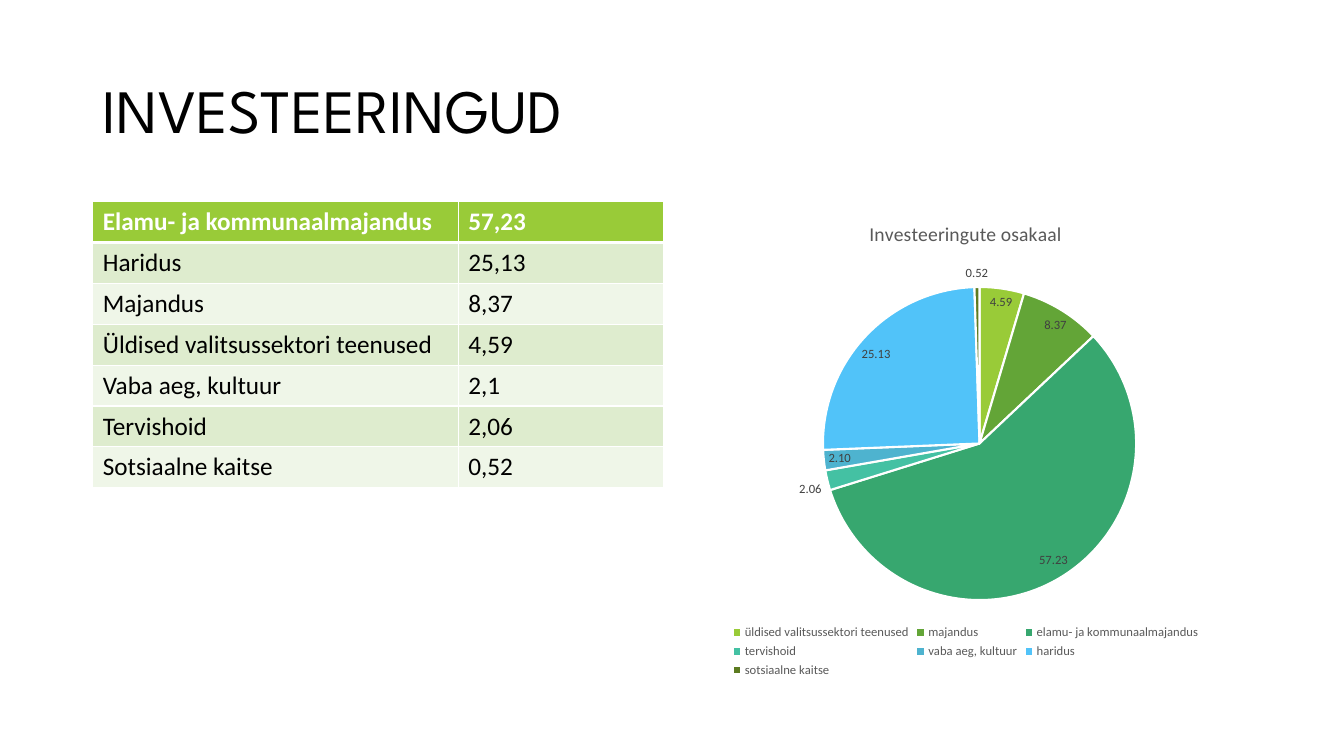
from lxml.etree import SubElement
from pptx import Presentation
from pptx.chart.data import CategoryChartData
from pptx.dml.color import RGBColor
from pptx.enum.chart import XL_CHART_TYPE, XL_LABEL_POSITION, XL_LEGEND_POSITION
from pptx.enum.text import MSO_ANCHOR
from pptx.oxml.ns import qn
from pptx.util import Inches, Pt

BLACK = RGBColor(0x00, 0x00, 0x00)
WHITE = RGBColor(0xFF, 0xFF, 0xFF)
GREY = RGBColor(0x59, 0x59, 0x59)
DARK_GREY = RGBColor(0x40, 0x40, 0x40)
LIME = RGBColor(0x99, 0xCB, 0x38)
BAND_DARK = RGBColor(0xDE, 0xEC, 0xCE)
BAND_LIGHT = RGBColor(0xEF, 0xF6, 0xE8)
SLICE_COLORS = [
    LIME,
    RGBColor(0x63, 0xA5, 0x37),
    RGBColor(0x37, 0xA7, 0x6F),
    RGBColor(0x44, 0xC1, 0xA3),
    RGBColor(0x4E, 0xB3, 0xCF),
    RGBColor(0x51, 0xC3, 0xF9),
    RGBColor(0x5C, 0x7B, 0x20),
]

TABLE_ROWS = [
    ("Elamu- ja kommunaalmajandus", "57,23"),
    ("Haridus", "25,13"),
    ("Majandus", "8,37"),
    ("Üldised valitsussektori teenused", "4,59"),
    ("Vaba aeg, kultuur", "2,1"),
    ("Tervishoid", "2,06"),
    ("Sotsiaalne kaitse", "0,52"),
]
SHARES = {
    "üldised valitsussektori teenused": 4.59,
    "majandus": 8.37,
    "elamu- ja kommunaalmajandus": 57.23,
    "tervishoid": 2.06,
    "vaba aeg, kultuur": 2.1,
    "haridus": 25.13,
    "sotsiaalne kaitse": 0.52,
}


class Deck:
    """Places elements on a grid of 12 columns and rows of 0.4 inch."""

    MARGIN, GUTTER, COLUMNS, ROW = 0.92, 0.16, 12, 0.4
    WIDTH, HEIGHT = 13.33, 7.5
    HEAD_FONT, BODY_FONT = "League Spartan", "Calibri"

    def __init__(self):
        self.prs = Presentation()
        self.prs.slide_width = Inches(self.WIDTH)
        self.prs.slide_height = Inches(self.HEIGHT)
        self.s = self.prs.slides.add_slide(self.prs.slide_layouts[6])

    def box(self, col, row, cols, rows):
        """Return left, top, width and height of a block of grid cells."""
        step = (self.WIDTH - 2 * self.MARGIN + self.GUTTER) / self.COLUMNS
        return (Inches(self.MARGIN + col * step), Inches(row * self.ROW),
                Inches(cols * step - self.GUTTER), Inches(rows * self.ROW))

    def style(self, font, size, color, bold=False, name=BODY_FONT):
        font.name, font.size, font.bold = name, Pt(size), bold
        font.color.rgb = color

    def title(self, text, *cells):
        tf = self.s.shapes.add_textbox(*self.box(*cells)).text_frame
        tf.word_wrap = True
        tf.vertical_anchor = MSO_ANCHOR.MIDDLE
        tf.text = text
        p = tf.paragraphs[0]
        p.line_spacing = 0.9
        self.style(p.runs[0].font, 44, BLACK, name=self.HEAD_FONT)

    def borders(self, cell, bottom, top):
        tc_pr = cell._tc.get_or_add_tcPr()
        for side, width in (("L", 1), ("R", 1), ("T", top), ("B", bottom)):
            ln = SubElement(tc_pr, qn(f"a:ln{side}"), w=str(Pt(width)))
            fill = SubElement(ln, qn("a:solidFill"))
            SubElement(fill, qn("a:srgbClr"), val=str(WHITE))

    def table(self, rows, first_share, *cells):
        left, top, width, height = self.box(*cells)
        table = self.s.shapes.add_table(
            len(rows), len(rows[0]), left, top, width, height).table
        table.columns[0].width = int(width * first_share)
        table.columns[1].width = width - table.columns[0].width
        for i, row in enumerate(rows):
            header = i == 0
            fill = LIME if header else BAND_DARK if i % 2 else BAND_LIGHT
            for j, text in enumerate(row):
                cell = table.cell(i, j)
                cell.text = text
                self.borders(cell, bottom=3 if header else 1,
                             top=3 if i == 1 else 1)
                cell.fill.solid()
                cell.fill.fore_color.rgb = fill
                self.style(cell.text_frame.paragraphs[0].runs[0].font, 18,
                           WHITE if header else BLACK, header)

    def pie(self, title, shares, colors, *cells):
        data = CategoryChartData(number_format="#,##0.00")
        data.categories = list(shares)
        data.add_series(title, list(shares.values()))
        chart = self.s.shapes.add_chart(
            XL_CHART_TYPE.PIE, *self.box(*cells), data).chart
        self.style(chart.font, 10, BLACK)

        chart.has_title = True
        tf = chart.chart_title.text_frame
        tf.text = title
        self.style(tf.paragraphs[0].runs[0].font, 14, GREY)
        chart.chart_title.include_in_layout = False

        chart.has_legend = True
        chart.legend.position = XL_LEGEND_POSITION.BOTTOM
        chart.legend.include_in_layout = False
        self.style(chart.legend.font, 9, GREY)

        plot = chart.plots[0]
        plot.vary_by_categories = True
        for i, color in enumerate(colors):
            fmt = plot.series[0].points[i].format
            fmt.fill.solid()
            fmt.fill.fore_color.rgb = color
            fmt.line.color.rgb = WHITE
            fmt.line.width = Pt(1.5)

        labels = plot.series[0].data_labels
        labels.show_value = True
        labels.number_format = "#,##0.00"
        labels.number_format_is_linked = False
        labels.position = XL_LABEL_POSITION.BEST_FIT
        self.style(labels.font, 9, DARK_GREY)


def main():
    deck = Deck()
    deck.title("INVESTEERINGUD", 0, 1, 12, 3.62)
    deck.table(TABLE_ROWS, 0.64, 0, 5, 6, 7.1)
    deck.pie("Investeeringute osakaal", SHARES, SLICE_COLORS, 6, 5, 6, 11.9)
    deck.prs.save("out.pptx")


if __name__ == "__main__":
    main()
